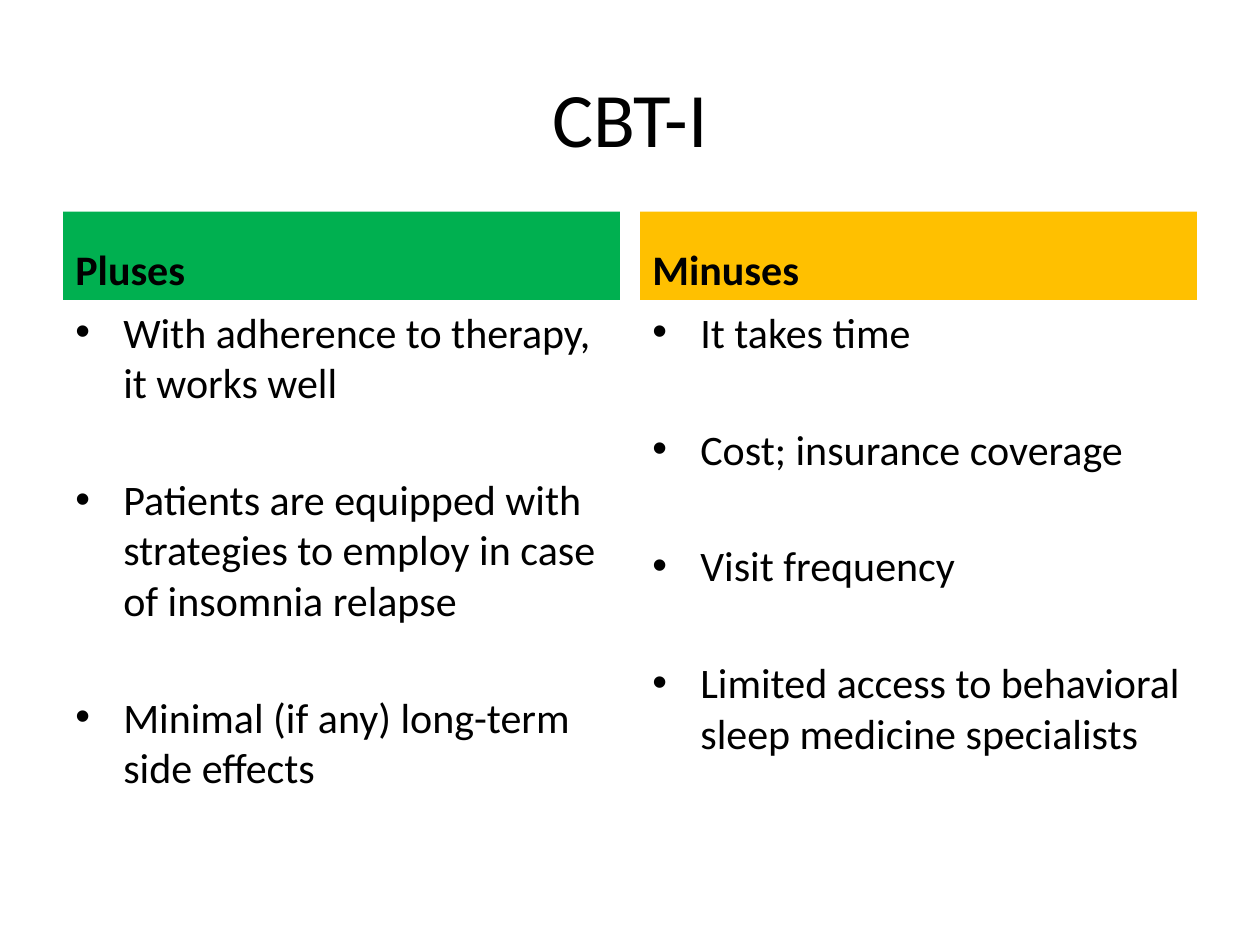
from pptx import Presentation
from pptx.dml.color import RGBColor
from pptx.enum.shapes import MSO_SHAPE
from pptx.enum.text import MSO_ANCHOR, PP_ALIGN
from pptx.oxml.ns import qn
from pptx.util import Inches, Pt
from lxml.etree import SubElement

COLORS = {"text": "000000", "pluses": "00B050", "minuses": "FFC000"}
FONT = "Calibri"
TITLE_SIZE, BODY_SIZE = 44, 24
MARGIN, COLUMN_WIDTH, COLUMN_GAP = 0.5, 4.42, 0.16
HEADER_TOP, HEADER_HEIGHT, LIST_HEIGHT = 1.68, 0.7, 4.32
BULLET_INDENT = 0.38
ITEM_GAP = 38

COLUMNS = [
    ("Pluses", "pluses", [
        "With adherence to therapy, it works well",
        "Patients are equipped with strategies to employ in case of insomnia relapse",
        "Minimal (if any) long-term side effects",
    ]),
    ("Minuses", "minuses", [
        "It takes time",
        "Cost; insurance coverage",
        "Visit frequency",
        "Limited access to behavioral sleep medicine specialists",
    ]),
]


class SlideBuilder:
    def __init__(self, slide):
        self.slide = slide

    def format_paragraph(self, paragraph, size, bold=False, align=PP_ALIGN.LEFT):
        paragraph.alignment = align
        for run in paragraph.runs:
            run.font.name = FONT
            run.font.size = Pt(size)
            run.font.bold = bold
            run.font.color.rgb = RGBColor.from_string(COLORS["text"])

    def title(self, text, left, top, width, height):
        title = self.slide.shapes.title
        title.left, title.top = Inches(left), Inches(top)
        title.width, title.height = Inches(width), Inches(height)
        title.text_frame.text = text
        title.text_frame.vertical_anchor = MSO_ANCHOR.MIDDLE
        self.format_paragraph(title.text_frame.paragraphs[0], TITLE_SIZE, align=PP_ALIGN.CENTER)

    def header(self, text, color, left, top, width, height):
        shape = self.slide.shapes.add_shape(
            MSO_SHAPE.RECTANGLE, Inches(left), Inches(top), Inches(width), Inches(height))
        shape.shadow.inherit = False
        shape.fill.solid()
        shape.fill.fore_color.rgb = RGBColor.from_string(COLORS[color])
        shape.line.fill.background()
        shape.text_frame.text = text
        shape.text_frame.vertical_anchor = MSO_ANCHOR.BOTTOM
        self.format_paragraph(shape.text_frame.paragraphs[0], BODY_SIZE, bold=True)

    def bullet_list(self, items, left, top, width, height):
        shape = self.slide.shapes.add_textbox(
            Inches(left), Inches(top), Inches(width), Inches(height))
        text_frame = shape.text_frame
        text_frame.word_wrap = True
        text_frame.text = "\n".join(items)
        for index, paragraph in enumerate(text_frame.paragraphs):
            self.format_paragraph(paragraph, BODY_SIZE)
            paragraph.space_before = Pt(ITEM_GAP if index else 0)
            self.add_bullet(paragraph)

    def add_bullet(self, paragraph):
        properties = paragraph._p.get_or_add_pPr()
        properties.set("marL", str(Inches(BULLET_INDENT)))
        properties.set("indent", str(-Inches(BULLET_INDENT)))
        SubElement(properties, qn("a:buFont"), typeface="Arial")
        SubElement(properties, qn("a:buChar"), char="•")


def main():
    presentation = Presentation()
    presentation.slide_width, presentation.slide_height = Inches(10), Inches(7.5)
    title_only = presentation.slide_layouts.get_by_name("Title Only")
    builder = SlideBuilder(presentation.slides.add_slide(title_only))

    builder.title("CBT-I", MARGIN, 0.3, 9, 1.25)
    for index, (heading, color, items) in enumerate(COLUMNS):
        left = MARGIN + index * (COLUMN_WIDTH + COLUMN_GAP)
        builder.header(heading, color, left, HEADER_TOP, COLUMN_WIDTH, HEADER_HEIGHT)
        builder.bullet_list(items, left, HEADER_TOP + HEADER_HEIGHT, COLUMN_WIDTH, LIST_HEIGHT)

    presentation.save("out.pptx")


if __name__ == "__main__":
    main()
